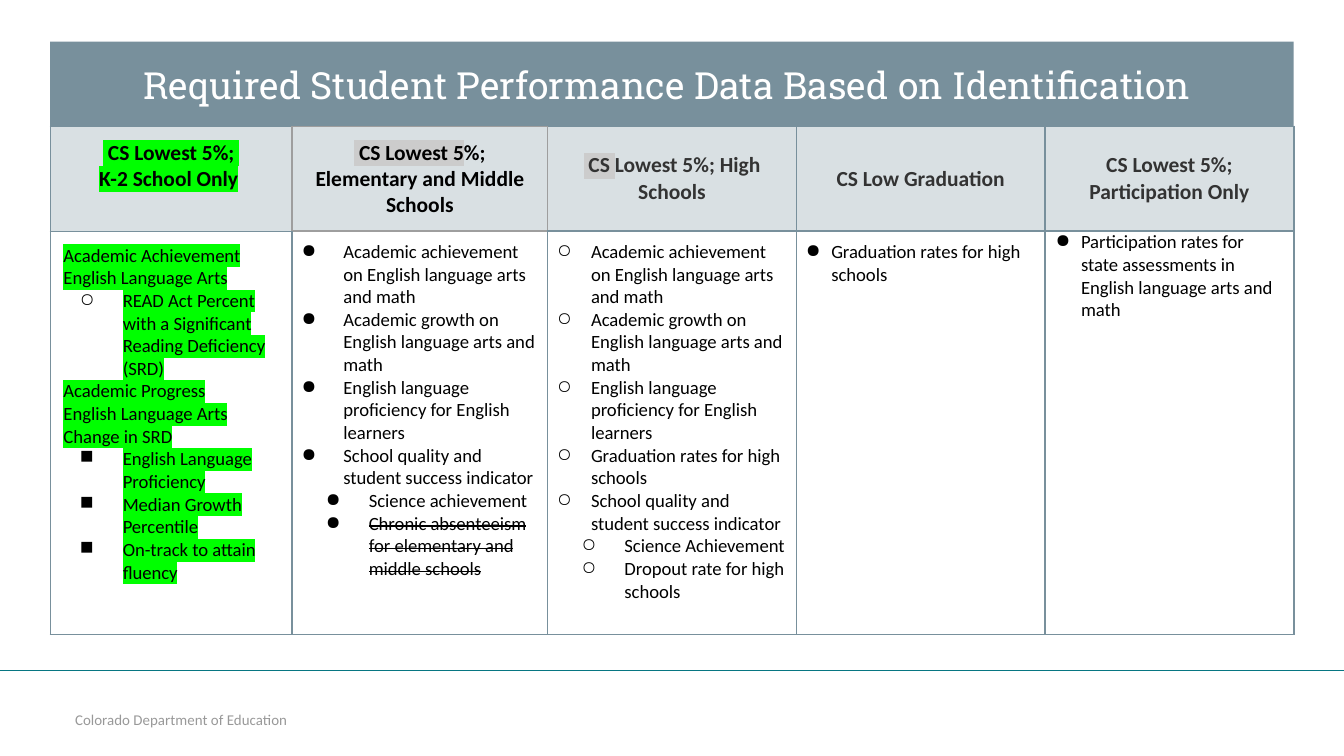
import pptx
import pptx.dml.color
import pptx.enum.shapes
import pptx.enum.text
import pptx.oxml
import pptx.oxml.ns
import pptx.util

Cm, Pt = pptx.util.Cm, pptx.util.Pt
RGB = pptx.dml.color.RGBColor.from_string
ALIGN = pptx.enum.text.PP_ALIGN
ANCHOR = pptx.enum.text.MSO_ANCHOR
INKS = {"slate": "78909C", "edge": "9E9E9E", "teal": "077682", "foot": "999999",
        "black": "000000", "dark": "333333", "white": "FFFFFF",
        "green": "00FF00", "grey": "CCCCCC"}


def node(tag, inner="", **attrs):
    pairs = "".join(f' {key}="{val}"' for key, val in attrs.items())
    space = pptx.oxml.ns.nsdecls("a")
    return pptx.oxml.parse_xml(f"<a:{tag} {space}{pairs}>{inner}</a:{tag}>")


def write(para, text, size, ink, mark=None, bold=False, strike=False, face="Calibri"):
    run = para.add_run()
    run.text = text
    font = run.font
    font.size, font.bold, font.name = Pt(size), bold, face
    font.color.rgb = RGB(INKS[ink])
    props = run._r.get_or_add_rPr()
    if strike:
        props.set("strike", "sngStrike")
    if mark:
        fill = props.find(pptx.oxml.ns.qn("a:solidFill"))
        fill.addnext(node("highlight", f'<a:srgbClr val="{INKS[mark]}"/>'))


deck = pptx.Presentation()
deck.slide_width, deck.slide_height = Cm(25.4), Cm(14.29)
slide = deck.slides.add_slide(deck.slide_layouts[6])
shapes = slide.shapes

# Footer and its rule
foot = shapes.add_textbox(Cm(1.42), Cm(13.44), Cm(8.2), Cm(0.33)).text_frame
foot.word_wrap = True
foot.margin_left = foot.margin_right = foot.margin_top = foot.margin_bottom = 0
write(foot.paragraphs[0], "Colorado Department of Education", 8, "foot")

rule = shapes.add_connector(pptx.enum.shapes.MSO_CONNECTOR.STRAIGHT,
                            0, Cm(12.67), Cm(25.4), Cm(12.67))
rule.line.color.rgb = RGB(INKS["teal"])
rule.line.width = Pt(0.75)
rule._element.spPr.append(node("effectLst"))

# Title band
band = shapes.add_shape(pptx.enum.shapes.MSO_SHAPE.RECTANGLE,
                        Cm(0.95), Cm(0.79), Cm(23.5), Cm(1.6))
band.shadow.inherit = False
band.fill.solid()
band.fill.fore_color.rgb = RGB(INKS["slate"])
band.line.fill.background()
frame = band.text_frame
frame.word_wrap = True
frame.margin_left = frame.margin_right = frame.margin_top = frame.margin_bottom = 0
frame.vertical_anchor = ANCHOR.MIDDLE
frame.paragraphs[0].alignment = ALIGN.CENTER
write(frame.paragraphs[0], "Required Student Performance Data Based on Identification ",
      20, "white", face="Roboto Slab")

# Heads: ink, then paragraphs made of (text, mark) runs
heads = [
    ("black", [[(" CS Lowest 5%; ", "green")],
               [("K-2 School Only", "green"), (" ", None)]]),
    ("black", [[(" CS Lowest 5", "grey"), ("%; Elementary and Middle Schools", None)]]),
    ("dark", [[(" CS ", "grey"), ("Lowest 5%; High Schools", None)]]),
    ("dark", [[("CS Low Graduation", None)]]),
    ("dark", [[("CS Lowest 5%; Participation Only", None)]]),
]

# List styles: level, left indent, first-line indent, bullet
styles = {
    "ring": (1, 1.12, -0.81, "○"), "box": (2, 1.12, -0.81, "■"),
    "dot": (0, 0.79, -0.81, "●"), "subdot": (0, 1.27, -0.81, "●"),
    "high": (1, 0.64, -0.66, "○"), "subhigh": (1, 1.27, -0.81, "○"),
    "slim": (0, 0.48, -0.48, "●"),
}
study = "Academic achievement on English language arts and math"
growth = "Academic growth on English language arts and math"
skill = "English language proficiency for English learners"
quality = "School quality and student success indicator"
grads = "Graduation rates for high schools"
lists = [
    [("plain", "Academic Achievement"), ("plain", "English Language Arts"),
     ("ring", "READ Act Percent with a Significant Reading Deficiency (SRD)"),
     ("plain", "Academic Progress"), ("plain", "English Language Arts"),
     ("plain", "Change in SRD"), ("box", "English Language Proficiency"),
     ("box", "Median Growth Percentile"), ("box", "On-track to attain fluency")],
    [("dot", study), ("dot", growth), ("dot", skill), ("dot", quality),
     ("subdot", "Science achievement"),
     ("subdot", "Chronic absenteeism for elementary and middle schools")],
    [("high", study), ("high", growth), ("high", skill), ("high", grads),
     ("high", quality), ("subhigh", "Science Achievement"),
     ("subhigh", "Dropout rate for high schools")],
    [("slim", grads)],
    [("slim", "Participation rates for state assessments in "
              "English language arts and math")],
]

# Table grid
widths, heights = [4.57, 4.83, 4.7, 4.7, 4.7], [1.98, 7.62]
grid = shapes.add_table(2, 5, Cm(0.95), Cm(2.39), Cm(sum(widths)), Cm(sum(heights))).table
grid.first_row = grid.horz_banding = False
for col, width in zip(grid.columns, widths):
    col.width = Cm(width)
for row, height in zip(grid.rows, heights):
    row.height = Cm(height)

# Cell insets (side, top and bottom), fills and borders
for r in range(2):
    for c in range(5):
        cell = grid.cell(r, c)
        side, top = [(0.25, 0.25), (0.18, 0.18), (0.18, 0.18), (0.18, 0.18), (0.2, 0)][c]
        if (r, c) == (0, 1):
            side = top = 0.25
        cell.margin_left = cell.margin_right = Cm(side)
        cell.margin_top = cell.margin_bottom = Cm(top)
        cell.vertical_anchor = ANCHOR.MIDDLE if r == 0 and c > 1 else ANCHOR.TOP
        cell.fill.solid()
        cell.fill.fore_color.rgb = RGB(INKS["white" if r else "slate"])
        props = cell._tc.get_or_add_tcPr()
        if r == 0:
            tint = props.find(".//" + pptx.oxml.ns.qn("a:srgbClr"))
            tint.append(node("alpha", val=28000))
        for spot, edge in enumerate("LRTB"):
            soft = ((r, c) == (0, 1) or (r, c, edge) in
                    [(0, 0, "R"), (0, 2, "L"), (1, 1, "T")])
            ink = INKS["edge" if soft else "slate"]
            thick = Pt(0.75 if c == 0 else 1)
            paint = f'<a:solidFill><a:srgbClr val="{ink}"/></a:solidFill>'
            props.insert(spot, node("ln" + edge, paint, w=thick))

# Head text
for c, (ink, paras) in enumerate(heads):
    frame = grid.cell(0, c).text_frame
    for i, runs in enumerate(paras):
        para = frame.add_paragraph() if i else frame.paragraphs[0]
        para.alignment = ALIGN.CENTER
        for text, mark in runs:
            write(para, text, 11.5, ink, mark, bold=True)

# List text
for c, items in enumerate(lists):
    frame = grid.cell(1, c).text_frame
    for i, (kind, text) in enumerate(items):
        para = frame.add_paragraph() if i else frame.paragraphs[0]
        if kind in styles:
            level, left, first, sign = styles[kind]
            para.level = level
            props = para._p.get_or_add_pPr()
            props.set("marL", str(Cm(left)))
            props.set("indent", str(Cm(first)))
            props.append(node("buClr", f'<a:srgbClr val="{INKS["black"]}"/>'))
            props.append(node("buChar", char=sign))
        write(para, text, 10, "black", None if c else "green",
              strike=text.startswith("Chronic"))

deck.save("out.pptx")
